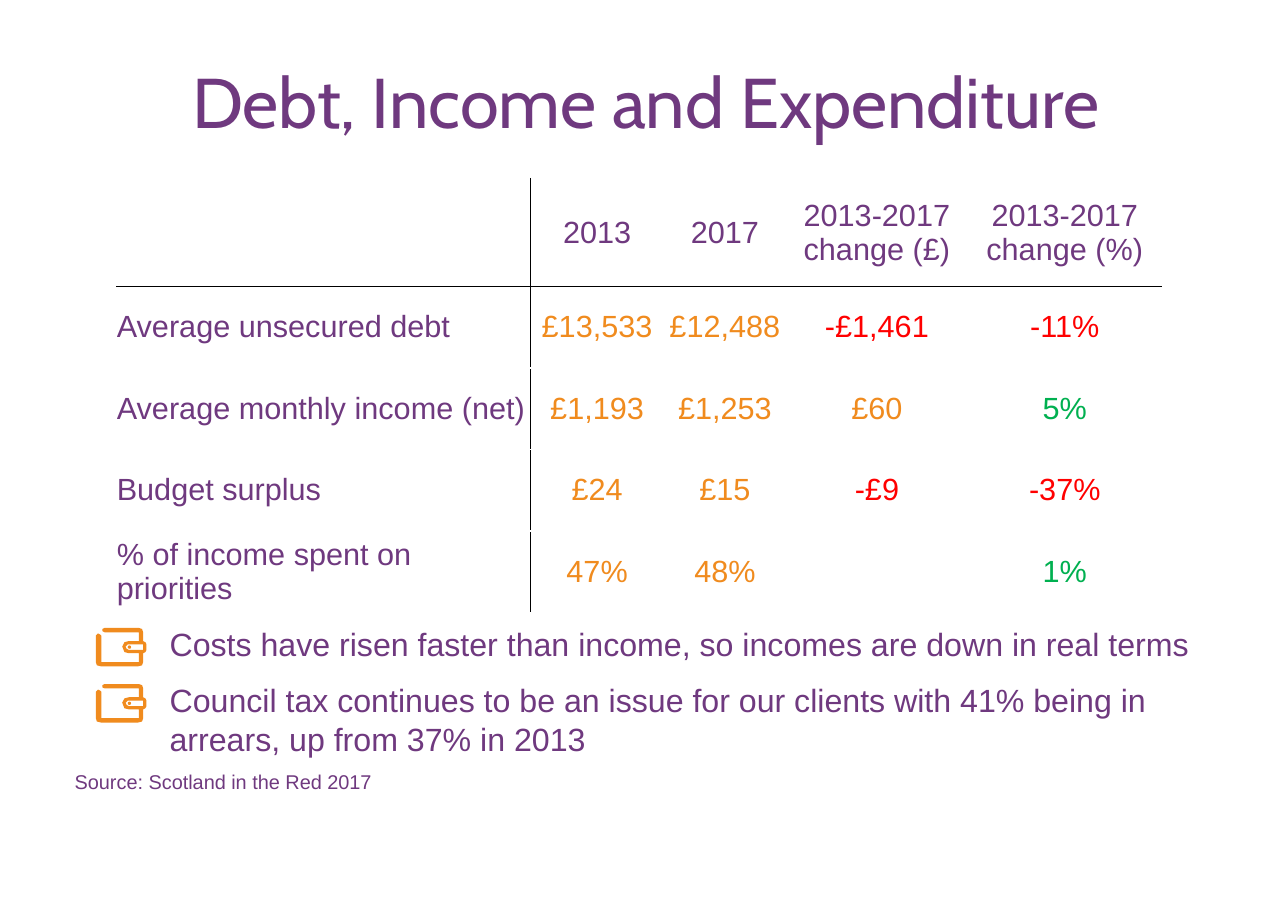
from lxml import etree
from pptx import Presentation
from pptx.dml.color import RGBColor
from pptx.enum.shapes import MSO_SHAPE
from pptx.enum.text import MSO_ANCHOR, PP_ALIGN
from pptx.oxml.ns import qn
from pptx.util import Inches, Pt

CENTER, LEFT = PP_ALIGN.CENTER, PP_ALIGN.LEFT
MIDDLE = MSO_ANCHOR.MIDDLE
OVAL = MSO_SHAPE.OVAL
PURPLE, ORANGE, RED, GREEN, BLACK = "6F397F", "F08B1E", "FF0000", "00B050", "000000"

TITLE = "Debt, Income and Expenditure"
SOURCE = "Source: Scotland in the Red 2017"
ROWS = [
    ("", "2013", "2017", "2013-2017 change (£)", "2013-2017 change (%)"),
    ("Average unsecured debt", "£13,533", "£12,488", "-£1,461", "-11%"),
    ("Average monthly income (net)", "£1,193", "£1,253", "£60", "5%"),
    ("Budget surplus", "£24", "£15", "-£9", "-37%"),
    ("% of income spent on priorities", "47%", "48%", "", "1%"),
]
BULLETS = [
    "Costs have risen faster than income, so incomes are down in real terms",
    "Council tax continues to be an issue for our clients with 41% being in arrears, up from 37% in 2013",
]

# Inches
SLIDE_W, SLIDE_H = 11.69, 8.27
TABLE_LEFT, TABLE_TOP = 1.06, 1.62
COL_WIDTHS = [3.75, 1.22, 1.1, 1.66, 1.75]
ROW_HEIGHTS = [0.98] + [0.74] * 4
BULLET_LEFT, BULLET_TOP, BULLET_STEP, BULLET_W = 1.43, 5.61, 0.51, 9.94
LINE_H = 0.41
ICON_LEFT, ICON_DROP = 0.87, 0.09

# Wallet outline and clasp opening, in hundredths of an inch
WALLET = [(43, 12), (43, 4), (42, 1), (39, 0), (8, 0), (6, 1), (6, 3), (8, 4),
          (39, 4), (39, 12), (30, 12), (26, 13), (24, 17), (26, 22), (30, 23),
          (39, 23), (39, 31), (5, 31), (5, 7), (4, 6), (2, 5), (0, 7), (0, 31),
          (1, 34), (5, 35), (38, 35), (42, 34), (43, 31), (43, 23), (45, 22),
          (46, 20), (46, 15), (45, 13)]
CLASP = [(43, 20), (30, 20), (28, 19), (27, 17), (29, 15), (43, 15)]


def color(hex_code):
    return RGBColor.from_string(hex_code)


def write(tf, text, size, hex_code, font="Arial", align=LEFT):
    p = tf.paragraphs[0]
    p.text = text
    p.alignment = align
    p.font.size = Pt(size)
    p.font.name = font
    p.font.color.rgb = color(hex_code)


def add_text(s, box, margins, *args, **kwargs):
    tf = s.shapes.add_textbox(*map(Inches, box)).text_frame
    tf.word_wrap = True
    tf.margin_left, tf.margin_top, tf.margin_right, tf.margin_bottom = map(Inches, margins)
    write(tf, *args, **kwargs)


def value_color(row, col):
    if row == 0 or col == 0:
        return PURPLE
    if ROWS[row][col].startswith("-"):
        return RED
    return GREEN if col == len(COL_WIDTHS) - 1 else ORANGE


def add_border(cell, side):
    ln = etree.SubElement(cell._tc.get_or_add_tcPr(), qn("a:ln" + side), w=str(Pt(0.5)))
    fill = etree.SubElement(ln, qn("a:solidFill"))
    etree.SubElement(fill, qn("a:srgbClr"), val=BLACK)


def add_figures(s):
    table = s.shapes.add_table(
        len(ROWS), len(COL_WIDTHS), Inches(TABLE_LEFT), Inches(TABLE_TOP),
        Inches(sum(COL_WIDTHS)), Inches(sum(ROW_HEIGHTS))).table
    table.first_row = table.horz_banding = False
    for column, width in zip(table.columns, COL_WIDTHS):
        column.width = Inches(width)
    for r, height in enumerate(ROW_HEIGHTS):
        table.rows[r].height = Inches(height)
        for c, text in enumerate(ROWS[r]):
            cell = table.cell(r, c)
            sides = {"L": c == 1, "R": c == 0, "T": r == 1, "B": r == 0}
            for side, drawn in sides.items():
                if drawn:
                    add_border(cell, side)
            cell.fill.background()
            cell.vertical_anchor = MIDDLE
            cell.margin_left = cell.margin_right = cell.margin_top = cell.margin_bottom = 0
            write(cell.text_frame, text, 20, value_color(r, c), align=CENTER if c else LEFT)


def paint(shape):
    shape.shadow.inherit = False
    shape.fill.solid()
    shape.fill.fore_color.rgb = color(ORANGE)
    shape.line.fill.background()


def add_wallet(s, left, top):
    builder = s.shapes.build_freeform(*WALLET[0], scale=Inches(0.01))
    builder.add_line_segments(WALLET[1:], close=True)
    builder.move_to(*CLASP[0])
    builder.add_line_segments(CLASP[1:], close=True)
    paint(builder.convert_to_shape(Inches(left), Inches(top)))
    paint(s.shapes.add_shape(OVAL, Inches(left + 0.29), Inches(top + 0.16),
                             Inches(0.03), Inches(0.03)))


def main():
    prs = Presentation()
    prs.slide_width, prs.slide_height = Inches(SLIDE_W), Inches(SLIDE_H)
    s = prs.slides.add_slide(prs.slide_layouts[6])
    add_text(s, (0.41, 0.4, 10.82, 0.96), (0.28, 0.13, 0.2, 0.2),
             TITLE, 46, PURPLE, "Cabin", CENTER)
    add_figures(s)
    for i, text in enumerate(BULLETS):
        top = BULLET_TOP + i * BULLET_STEP
        add_wallet(s, ICON_LEFT, top + ICON_DROP)
        add_text(s, (BULLET_LEFT, top, BULLET_W, LINE_H * (i + 1)),
                 (0.11, 0.06, 0.11, 0.06), text, 21, PURPLE)
    add_text(s, (0.58, 6.94, 4.17, 0.32), (0.1, 0.05, 0.1, 0.05), SOURCE, 13, PURPLE)
    prs.save("out.pptx")


if __name__ == "__main__":
    main()
